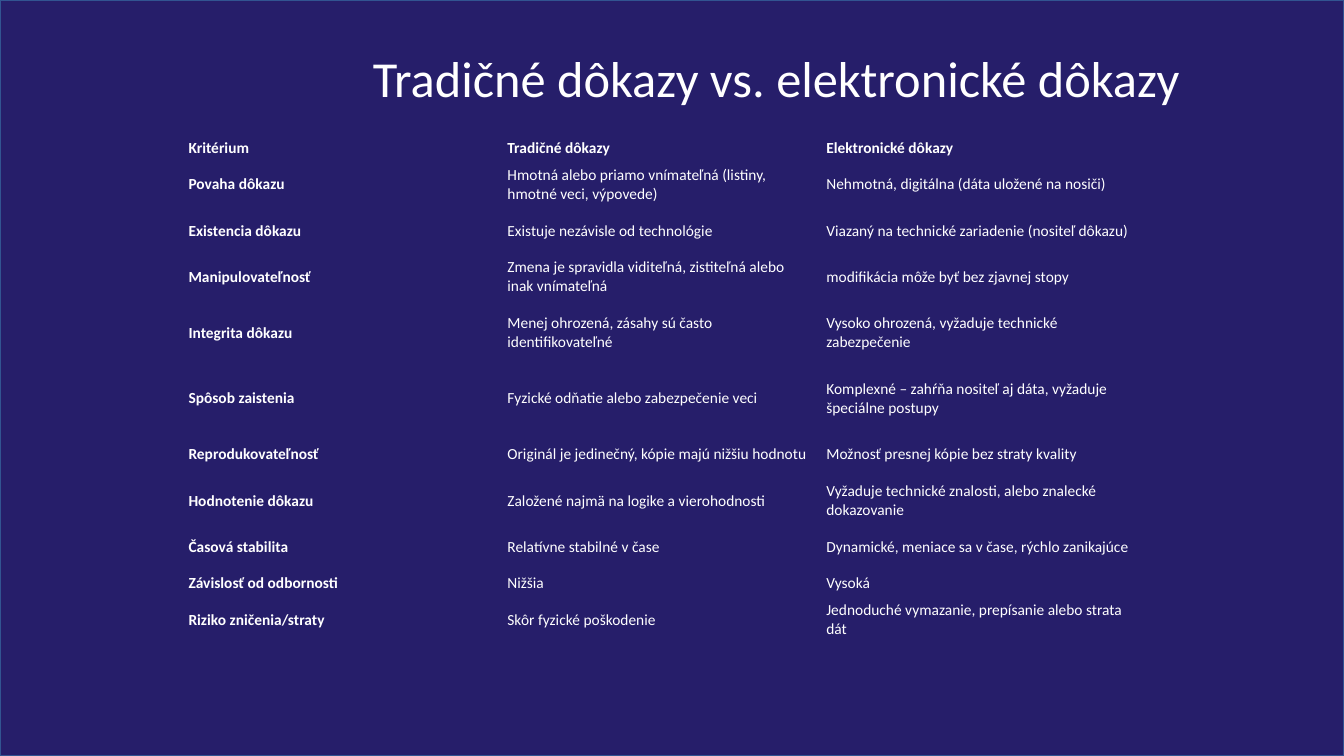
from pptx import Presentation
from pptx.dml.color import RGBColor
from pptx.enum.shapes import MSO_SHAPE
from pptx.enum.text import MSO_ANCHOR, PP_ALIGN
from pptx.oxml.ns import qn
from pptx.util import Inches, Pt

NAVY = RGBColor(0x26, 0x1E, 0x6A)
BLUE = RGBColor(0x32, 0x54, 0x91)
WHITE = RGBColor(0xFF, 0xFF, 0xFF)

NO_STYLE = "{2D5ABB26-0587-4C30-8999-92F81FD0307C}"
TITLE_FONT = {"name": "Calibri", "size": Pt(36)}
CELL_FONT = {"name": "Calibri", "size": Pt(11)}
CELL_FORMAT = {
    "vertical_anchor": MSO_ANCHOR.MIDDLE,
    "margin_left": Inches(0.06),
    "margin_right": Inches(0.06),
    "margin_top": Inches(0.03),
    "margin_bottom": Inches(0.03),
}

ONE_LINE, TWO_LINES, TALL = 0.26, 0.46, 0.65
ROWS = [
    (ONE_LINE, "Kritérium", "Tradičné dôkazy", "Elektronické dôkazy"),
    (TWO_LINES, "Povaha dôkazu",
     "Hmotná alebo priamo vnímateľná (listiny, hmotné veci, výpovede)",
     "Nehmotná, digitálna (dáta uložené na nosiči)"),
    (TWO_LINES, "Existencia dôkazu", "Existuje nezávisle od technológie",
     "Viazaný na technické zariadenie (nositeľ dôkazu)"),
    (TWO_LINES, "Manipulovateľnosť",
     "Zmena je spravidla viditeľná, zistiteľná alebo inak vnímateľná",
     "modifikácia môže byť bez zjavnej stopy"),
    (TALL, "Integrita dôkazu",
     "Menej ohrozená, zásahy sú často identifikovateľné",
     "Vysoko ohrozená, vyžaduje technické zabezpečenie"),
    (TALL, "Spôsob zaistenia", "Fyzické odňatie alebo zabezpečenie veci",
     "Komplexné – zahŕňa nositeľ aj dáta, vyžaduje špeciálne postupy"),
    (TWO_LINES, "Reprodukovateľnosť",
     "Originál je jedinečný, kópie majú nižšiu hodnotu",
     "Možnosť presnej kópie bez straty kvality"),
    (TWO_LINES, "Hodnotenie dôkazu", "Založené najmä na logike a vierohodnosti",
     "Vyžaduje technické znalosti, alebo znalecké dokazovanie"),
    (TWO_LINES, "Časová stabilita", "Relatívne stabilné v čase",
     "Dynamické, meniace sa v čase, rýchlo zanikajúce"),
    (ONE_LINE, "Závislosť od odbornosti", "Nižšia", "Vysoká"),
    (TWO_LINES, "Riziko zničenia/straty", "Skôr fyzické poškodenie",
     "Jednoduché vymazanie, prepísanie alebo strata dát"),
]


def set_format(target, values):
    """Set each named attribute of the target."""
    for name, value in values.items():
        setattr(target, name, value)


def add_backdrop(s, width, height):
    """Lay a navy panel behind everything on the slide."""
    sp = s.shapes.add_shape(MSO_SHAPE.RECTANGLE, 0, 0, width, height)
    sp.shadow.inherit = False
    sp.fill.solid()
    sp.fill.fore_color.rgb = NAVY
    sp.line.color.rgb = BLUE
    sp.line.width = Pt(1)
    s.shapes.title.element.addprevious(sp.element)


def add_title(s, text, left, top, width, height):
    """Place and format the title placeholder."""
    sp = s.shapes.title
    set_format(sp, {"left": left, "top": top, "width": width, "height": height})
    tf = sp.text_frame
    tf.text = text
    tf.vertical_anchor = MSO_ANCHOR.TOP
    p = tf.paragraphs[0]
    set_format(p, {"alignment": PP_ALIGN.CENTER, "line_spacing": 0.9})
    set_format(p.font, TITLE_FONT)
    p.font.color.rgb = WHITE


def add_comparison(s, rows, left, top, width):
    """Build the plain table with bold header row and first column."""
    height = Inches(sum(row[0] for row in rows))
    columns = len(rows[0]) - 1
    frame = s.shapes.add_table(len(rows), columns, left, top, width, height)
    frame.element.find(".//" + qn("a:tableStyleId")).text = NO_STYLE
    table = frame.table
    set_format(table, {"first_row": False, "horz_banding": False})
    for i, (row_height, *texts) in enumerate(rows):
        table.rows[i].height = Inches(row_height)
        for j, text in enumerate(texts):
            cell = table.cell(i, j)
            cell.text = text
            cell.fill.background()
            set_format(cell, CELL_FORMAT)
            font = cell.text_frame.paragraphs[0].font
            set_format(font, CELL_FONT | {"bold": i == 0 or j == 0})
            font.color.rgb = WHITE


def main():
    """Build and save the slide."""
    prs = Presentation()
    prs.slide_width, prs.slide_height = Inches(13.33), Inches(7.5)
    s = prs.slides.add_slide(prs.slide_layouts[5])
    add_backdrop(s, prs.slide_width, prs.slide_height)
    add_title(s, "Tradičné dôkazy vs. elektronické dôkazy",
              Inches(2.98), Inches(0.49), Inches(9.44), Inches(1.36))
    add_comparison(s, ROWS, Inches(1.81), Inches(1.34), Inches(9.49))
    prs.save("out.pptx")


if __name__ == "__main__":
    main()
